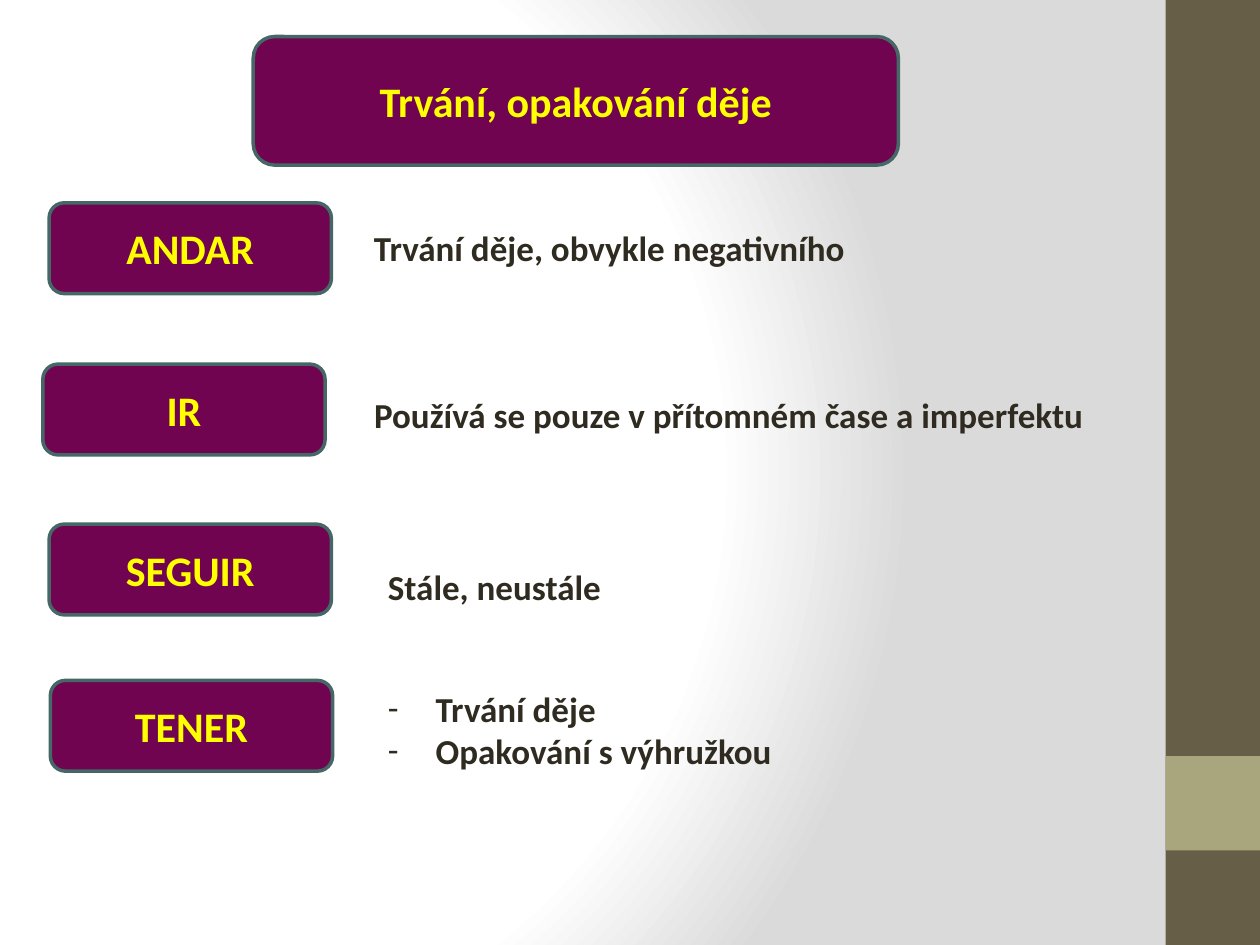
import pptx
import pptx.util
import pptx.dml.color
import pptx.enum.shapes
import pptx.enum.text
import pptx.oxml
import pptx.oxml.ns

FONT = "Calibri"
PURPLE, TEAL, YELLOW, INK = "700451", "456867", "FFFF00", "2F2B20"
BROWN, OLIVE = "675E47", "A9A57C"
WIDTH, HEIGHT = 10, 7.5
BAND = 0.75
VERB_W, VERB_H = 2.24, 0.72

TITLE = "Trvání, opakování děje"
VERBS = [
    ("ANDAR", 0.39, 1.61),
    ("IR", 0.34, 2.89),
    ("SEGUIR", 0.39, 4.16),
    ("TENER", 0.4, 5.4),
]
MEANINGS = [
    (["Trvání děje, obvykle negativního"], 2.87, 1.75, 3.97, 0.44),
    (["Používá se pouze v přítomném čase a imperfektu"], 2.87, 3.07, 5.88, 0.44),
    (["Stále, neustále"], 2.98, 4.44, 1.91, 0.44),
    (["Trvání děje", "Opakování s výhružkou"], 2.98, 5.41, 3.27, 0.77),
]
GRADIENT = [(0, "FFFFFF"), (75, "FFFFFF"), (100, "DADADA")]

SHAPE = pptx.enum.shapes.MSO_SHAPE
inch = pptx.util.Inches


def rgb(color):
    return pptx.dml.color.RGBColor.from_string(color)


def set_background(s):
    stops = "".join(
        f'<a:gs pos="{pos * 1000}"><a:srgbClr val="{color}"/></a:gs>'
        for pos, color in GRADIENT
    )
    bg = pptx.oxml.parse_xml(
        f'<p:bg {pptx.oxml.ns.nsdecls("p", "a")}><p:bgPr><a:gradFill rotWithShape="1">'
        f'<a:gsLst>{stops}</a:gsLst><a:path path="circle">'
        '<a:fillToRect l="20000" t="50000" r="100000" b="50000"/></a:path>'
        '</a:gradFill><a:effectLst/></p:bgPr></p:bg>'
    )
    s.element.cSld.insert(0, bg)


def add_block(s, kind, box, fill, line=None):
    sp = s.shapes.add_shape(kind, *map(inch, box))
    sp.shadow.inherit = False
    sp.fill.solid()
    sp.fill.fore_color.rgb = rgb(fill)
    if line:
        sp.line.color.rgb = rgb(line)
        sp.line.width = pptx.util.Pt(2)
    else:
        sp.line.fill.background()
    return sp


def format_run(p, size, color):
    r = p.runs[0]
    r.font.name = FONT
    r.font.size = pptx.util.Pt(size)
    r.font.bold = True
    r.font.color.rgb = rgb(color)


def add_label(s, text, box):
    tf = add_block(s, SHAPE.ROUNDED_RECTANGLE, box, PURPLE, TEAL).text_frame
    tf.text = text
    tf.vertical_anchor = pptx.enum.text.MSO_ANCHOR.MIDDLE
    p = tf.paragraphs[0]
    p.alignment = pptx.enum.text.PP_ALIGN.CENTER
    format_run(p, 24, YELLOW)


def add_dash(p):
    pPr = p._p.get_or_add_pPr()
    indent = inch(0.38)
    pPr.set("marL", str(indent))
    pPr.set("indent", str(-indent))
    pPr.append(pptx.oxml.parse_xml(
        f'<a:buFont {pptx.oxml.ns.nsdecls("a")} typeface="{FONT}"/>'))
    pPr.append(pptx.oxml.parse_xml(
        f'<a:buChar {pptx.oxml.ns.nsdecls("a")} char="-"/>'))


def add_meaning(s, lines, box):
    tf = s.shapes.add_textbox(*map(inch, box)).text_frame
    tf.word_wrap = False
    tf.auto_size = pptx.enum.text.MSO_AUTO_SIZE.SHAPE_TO_FIT_TEXT
    tf.text = "\n".join(lines)
    for p in tf.paragraphs:
        format_run(p, 20, INK)
        if len(lines) > 1:
            add_dash(p)


def main():
    prs = pptx.Presentation()
    prs.slide_width, prs.slide_height = inch(WIDTH), inch(HEIGHT)
    s = prs.slides.add_slide(prs.slide_layouts[6])
    set_background(s)
    add_block(s, SHAPE.RECTANGLE, (WIDTH - BAND, 0, BAND, HEIGHT), BROWN)
    add_block(s, SHAPE.RECTANGLE, (WIDTH - BAND, HEIGHT - 2 * BAND, BAND, BAND), OLIVE)
    add_label(s, TITLE, (2.01, 0.29, 5.12, 1.02))
    for text, left, top in VERBS:
        add_label(s, text, (left, top, VERB_W, VERB_H))
    for lines, *box in MEANINGS:
        add_meaning(s, lines, box)
    prs.save("out.pptx")


if __name__ == "__main__":
    main()
